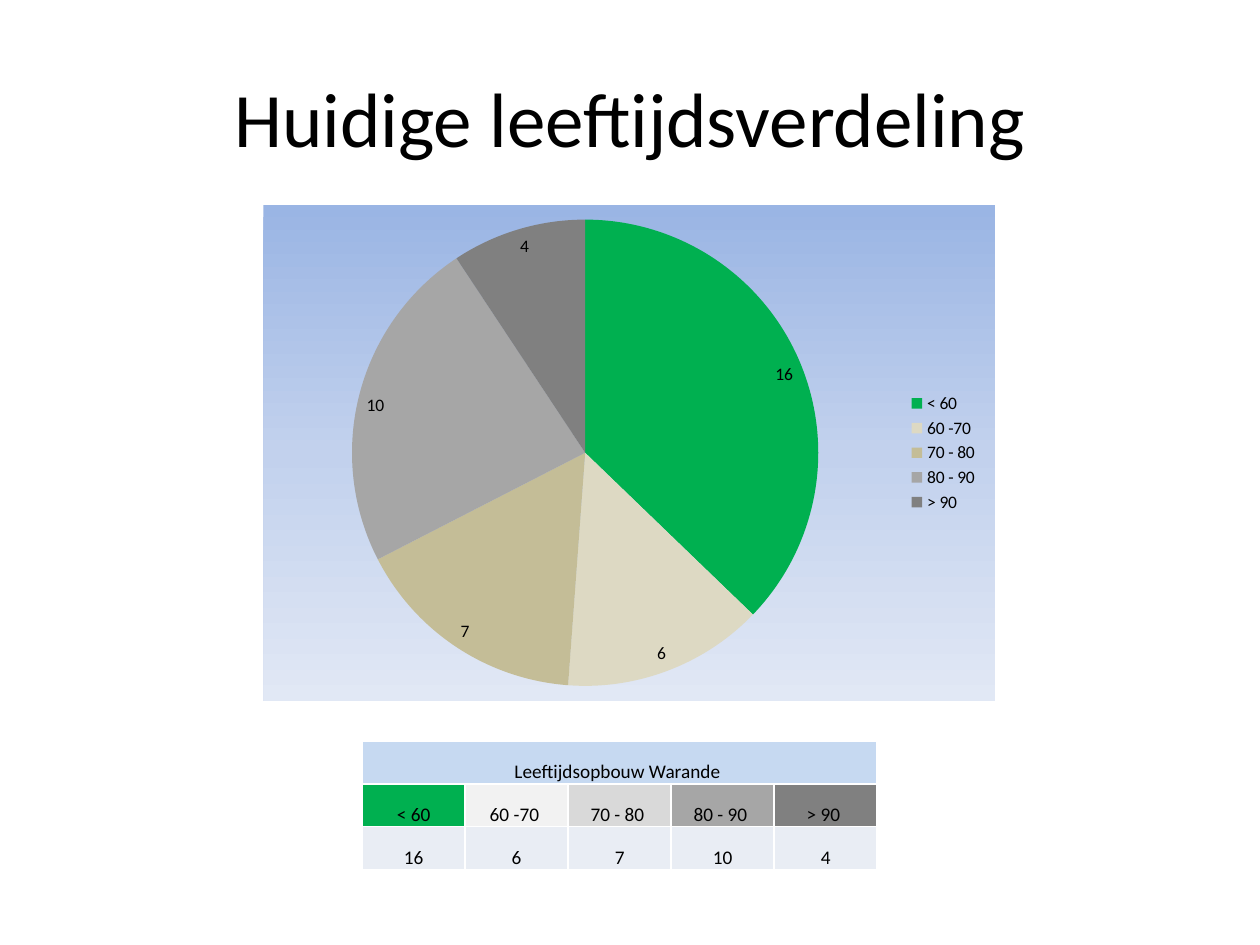
from lxml.etree import SubElement
from pptx import Presentation
from pptx.chart.data import CategoryChartData
from pptx.dml.color import RGBColor
from pptx.enum.chart import XL_CHART_TYPE as ChartType
from pptx.enum.chart import XL_LABEL_POSITION as LabelPosition
from pptx.enum.chart import XL_LEGEND_POSITION as LegendPosition
from pptx.enum.text import MSO_ANCHOR as Anchor
from pptx.enum.text import PP_ALIGN as Align
from pptx.oxml import parse_xml
from pptx.oxml.ns import nsdecls, qn
from pptx.util import Pt

TITLE = "Huidige leeftijdsverdeling"
TABLE_TITLE = "Leeftijdsopbouw Warande "
# age group, residents, pie colour, table colour
AGE_GROUPS = [
    ("< 60", 16, "green", "green"),
    ("60 -70 ", 6, "sand", "white_grey"),
    ("70 - 80 ", 7, "dark_sand", "light_grey"),
    ("80 - 90 ", 10, "grey", "grey"),
    ("> 90 ", 4, "dark_grey", "dark_grey"),
]
COLORS = {
    "text": "000000", "border": "FFFFFF",
    "green": "00B050", "sand": "DDD9C3", "dark_sand": "C4BD97",
    "white_grey": "F2F2F2", "light_grey": "D9D9D9",
    "grey": "A6A6A6", "dark_grey": "808080",
    "table_title": "C6D9F1", "table_value": "E9EDF4",
    "sky_top": "9AB5E4", "sky_middle": "C2D1ED", "sky_bottom": "E1E8F5",
}
CHART_GRADIENT = [(0, "sky_top"), (50, "sky_middle"), (100, "sky_bottom")]
PIE_AREA = {"x": 0.12, "y": 0.03, "w": 0.64, "h": 0.94}
FONT = "Calibri"
COLUMN_WIDTH, ROW_HEIGHT = 58.9, 24.5


def color(name):
    return RGBColor.from_string(COLORS[name])


def style_font(font, size):
    font.name = FONT
    font.size = Pt(size)
    font.color.rgb = color("text")


def fill_solid(fill, name):
    fill.solid()
    fill.fore_color.rgb = color(name)


def add_title(slide):
    text_box = slide.shapes.add_textbox(Pt(36), Pt(21.6), Pt(648), Pt(90))
    text_frame = text_box.text_frame
    text_frame.word_wrap = True
    text_frame.vertical_anchor = Anchor.MIDDLE
    text_frame.text = TITLE
    paragraph = text_frame.paragraphs[0]
    paragraph.alignment = Align.CENTER
    style_font(paragraph.runs[0].font, 44)


def set_chart_background(chart):
    stops = "".join(
        f'<a:gs pos="{position * 1000}"><a:srgbClr val="{COLORS[name]}"/></a:gs>'
        for position, name in CHART_GRADIENT)
    properties = parse_xml(
        f'<c:spPr {nsdecls("c", "a")}><a:gradFill><a:gsLst>{stops}</a:gsLst>'
        '<a:lin ang="5400000" scaled="0"/></a:gradFill>'
        '<a:ln><a:noFill/></a:ln></c:spPr>')
    chart.element.find(qn("c:chart")).addnext(properties)


def set_pie_area(chart):
    plot_area = chart.element.find(qn("c:chart")).find(qn("c:plotArea"))
    for layout in plot_area.findall(qn("c:layout")):
        plot_area.remove(layout)
    sizes = "".join(f'<c:{key} val="{value}"/>' for key, value in PIE_AREA.items())
    plot_area.insert(0, parse_xml(
        f'<c:layout {nsdecls("c")}><c:manualLayout><c:layoutTarget val="inner"/>'
        f'<c:xMode val="edge"/><c:yMode val="edge"/>{sizes}'
        '</c:manualLayout></c:layout>'))


def add_age_chart(slide):
    chart_data = CategoryChartData()
    chart_data.categories = [group[0] for group in AGE_GROUPS]
    chart_data.add_series("Series 1", [group[1] for group in AGE_GROUPS])
    chart = slide.shapes.add_chart(
        ChartType.PIE, Pt(150.5), Pt(117), Pt(418), Pt(283.5), chart_data).chart
    chart.has_title = False
    style_font(chart.font, 10)
    chart.has_legend = True
    chart.legend.position = LegendPosition.RIGHT
    chart.legend.include_in_layout = False

    plot = chart.plots[0]
    plot.vary_by_categories = True
    plot.has_data_labels = True
    plot.data_labels.show_value = True
    plot.data_labels.position = LabelPosition.INSIDE_END
    for index, (_, _, pie_color, _) in enumerate(AGE_GROUPS):
        point_format = plot.series[0].points[index].format
        fill_solid(point_format.fill, pie_color)
        point_format.line.fill.background()
    set_chart_background(chart)
    set_pie_area(chart)


def set_borders(cell):
    properties = cell._tc.get_or_add_tcPr()
    for position, side in enumerate(("lnL", "lnR", "lnT", "lnB")):
        line = parse_xml(f'<a:{side} {nsdecls("a")} w="12700"/>')
        fill = SubElement(line, qn("a:solidFill"))
        SubElement(fill, qn("a:srgbClr"), val=COLORS["border"])
        properties.insert(position, line)


def fill_cell(cell, text, fill_name):
    cell.text = text
    cell.vertical_anchor = Anchor.BOTTOM
    cell.margin_left = cell.margin_right = cell.margin_top = Pt(0.7)
    cell.margin_bottom = Pt(0)
    paragraph = cell.text_frame.paragraphs[0]
    paragraph.alignment = Align.CENTER
    style_font(paragraph.runs[0].font, 11)
    fill_solid(cell.fill, fill_name)


def add_age_table(slide):
    column_count = len(AGE_GROUPS)
    table = slide.shapes.add_table(
        3, column_count, Pt(206.9), Pt(423.4),
        Pt(COLUMN_WIDTH * column_count), Pt(ROW_HEIGHT * 3)).table
    for column in table.columns:
        column.width = Pt(COLUMN_WIDTH)
    for row in table.rows:
        row.height = Pt(ROW_HEIGHT)

    table.cell(0, 0).merge(table.cell(0, column_count - 1))
    fill_cell(table.cell(0, 0), TABLE_TITLE, "table_title")
    for index, (label, count, _, label_color) in enumerate(AGE_GROUPS):
        fill_cell(table.cell(1, index), label, label_color)
        fill_cell(table.cell(2, index), str(count), "table_value")
    for cell in table.iter_cells():
        set_borders(cell)


def main():
    presentation = Presentation()
    presentation.slide_width, presentation.slide_height = Pt(720), Pt(540)
    slide = presentation.slides.add_slide(presentation.slide_layouts[6])
    add_title(slide)
    add_age_chart(slide)
    add_age_table(slide)
    presentation.save("out.pptx")


if __name__ == "__main__":
    main()
